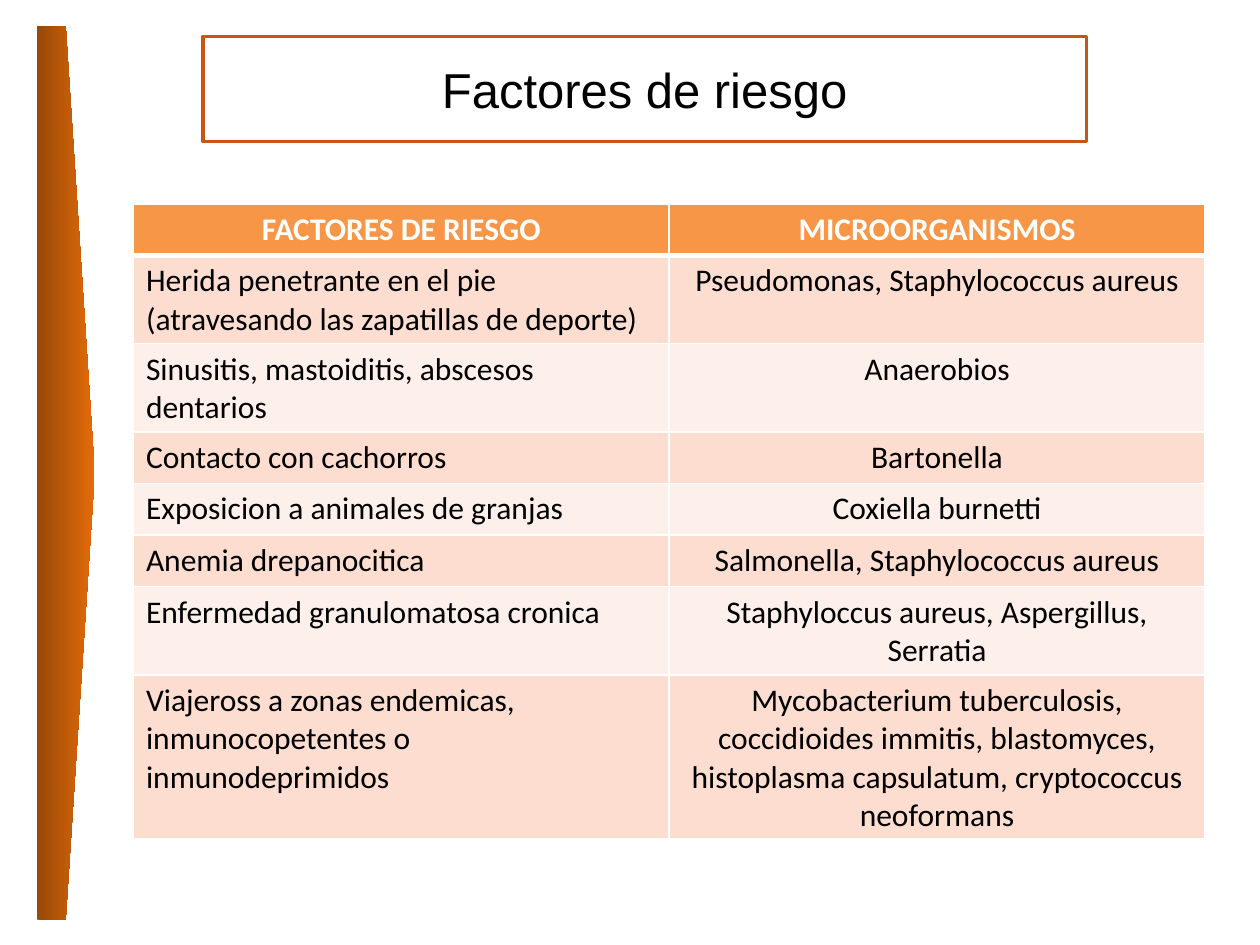
"""Build a slide that pairs risk factors with their microorganisms."""
from dataclasses import dataclass

import pptx
import pptx.dml.color
import pptx.enum.shapes
import pptx.enum.text
import pptx.oxml
import pptx.oxml.ns
import pptx.util
from pptx.util import Cm

RGBColor = pptx.dml.color.RGBColor
Alignment = pptx.enum.text.PP_ALIGN


@dataclass(frozen=True)
class Theme:
    title_font: str = "Arial"
    table_font: str = "Calibri"
    title_size: int = 28
    table_size: int = 18
    text: str = "000000"
    white: str = "FFFFFF"
    title_line: str = "C95515"
    ribbon_start: str = "984807"
    ribbon_end: str = "E46C0A"
    header: str = "F79646"
    bands: tuple[str, str] = ("FCDDCF", "FDEFE9")


@dataclass(frozen=True)
class RiskFactor:
    factor: str
    microorganisms: str


@dataclass(frozen=True)
class CellStyle:
    fill: str
    color: str
    bold: bool
    alignment: Alignment
    bottom_width: float = 1


THEME = Theme()
HEADER = RiskFactor("FACTORES DE RIESGO", "MICROORGANISMOS")
RISK_FACTORS = [
    RiskFactor("Herida penetrante en el pie (atravesando las zapatillas de deporte)",
               "Pseudomonas, Staphylococcus aureus"),
    RiskFactor("Sinusitis, mastoiditis, abscesos dentarios", "Anaerobios"),
    RiskFactor("Contacto con cachorros", "Bartonella"),
    RiskFactor("Exposicion a animales de granjas", "Coxiella burnetti"),
    RiskFactor("Anemia drepanocitica", "Salmonella, Staphylococcus aureus"),
    RiskFactor("Enfermedad granulomatosa cronica",
               "Staphyloccus aureus, Aspergillus, Serratia"),
    RiskFactor("Viajeross a zonas endemicas, inmunocopetentes o inmunodeprimidos",
               "Mycobacterium tuberculosis, coccidioides immitis, blastomyces, "
               "histoplasma capsulatum, cryptococcus neoformans"),
]


def rgb(value: str) -> RGBColor:
    return RGBColor.from_string(value)


def format_paragraph(paragraph, font: str, size: int, color: str,
                     alignment: Alignment, bold: bool = False) -> None:
    paragraph.alignment = alignment
    paragraph.font.name = font
    paragraph.font.size = pptx.util.Pt(size)
    paragraph.font.color.rgb = rgb(color)
    paragraph.font.bold = bold


def draw_ribbon(slide) -> None:
    ribbon = slide.shapes.add_shape(
        pptx.enum.shapes.MSO_SHAPE.PENTAGON, Cm(0.74), Cm(0.53), Cm(1.17), Cm(18.01))
    ribbon.shadow.inherit = False
    ribbon.line.fill.background()
    ribbon.fill.gradient()
    ribbon.fill.gradient_angle = 0
    colors = (THEME.ribbon_start, THEME.ribbon_end)
    for stop, color, position in zip(ribbon.fill.gradient_stops, colors, (0, 1)):
        stop.color.rgb = rgb(color)
        stop.position = position


def draw_title(slide, text: str) -> None:
    title = slide.shapes.title
    title.left, title.top, title.width, title.height = Cm(4.09), Cm(1.07), Cm(17.81), Cm(1.45)
    title.line.color.rgb = rgb(THEME.title_line)
    title.line.width = pptx.util.Pt(2)
    title.text_frame.text = text
    title.text_frame.auto_size = pptx.enum.text.MSO_AUTO_SIZE.SHAPE_TO_FIT_TEXT
    format_paragraph(title.text_frame.paragraphs[0], THEME.title_font, THEME.title_size,
                     THEME.text, Alignment.CENTER)


def set_borders(cell, color: str, bottom_width: float) -> None:
    properties = cell._tc.get_or_add_tcPr()
    for side, width in (("L", 1), ("R", 1), ("T", 1), ("B", bottom_width)):
        properties.append(pptx.oxml.parse_xml(
            f'<a:ln{side} {pptx.oxml.ns.nsdecls("a")} w="{pptx.util.Pt(width)}">'
            f'<a:solidFill><a:srgbClr val="{color}"/></a:solidFill></a:ln{side}>'))


def fill_cell(cell, text: str, style: CellStyle) -> None:
    set_borders(cell, THEME.white, style.bottom_width)
    cell.fill.solid()
    cell.fill.fore_color.rgb = rgb(style.fill)
    cell.text = text
    format_paragraph(cell.text_frame.paragraphs[0], THEME.table_font, THEME.table_size,
                     style.color, style.alignment, style.bold)


def draw_table(slide, header: RiskFactor, risk_factors: list[RiskFactor]) -> None:
    row_count = len(risk_factors) + 1
    table = slide.shapes.add_table(
        row_count, 2, Cm(2.69), Cm(4.11), Cm(21.6), Cm(1.04) * row_count).table
    header_style = CellStyle(THEME.header, THEME.white, True, Alignment.CENTER, 3)
    fill_cell(table.cell(0, 0), header.factor, header_style)
    fill_cell(table.cell(0, 1), header.microorganisms, header_style)
    for row, entry in enumerate(risk_factors, start=1):
        band = THEME.bands[(row - 1) % 2]
        fill_cell(table.cell(row, 0), entry.factor,
                  CellStyle(band, THEME.text, False, Alignment.LEFT))
        fill_cell(table.cell(row, 1), entry.microorganisms,
                  CellStyle(band, THEME.text, False, Alignment.CENTER))


def main() -> None:
    presentation = pptx.Presentation()
    presentation.slide_width, presentation.slide_height = Cm(25.4), Cm(19.05)
    slide = presentation.slides.add_slide(presentation.slide_layouts.get_by_name("Title Only"))
    draw_ribbon(slide)
    draw_title(slide, "Factores de riesgo")
    draw_table(slide, HEADER, RISK_FACTORS)
    presentation.save("out.pptx")


if __name__ == "__main__":
    main()
